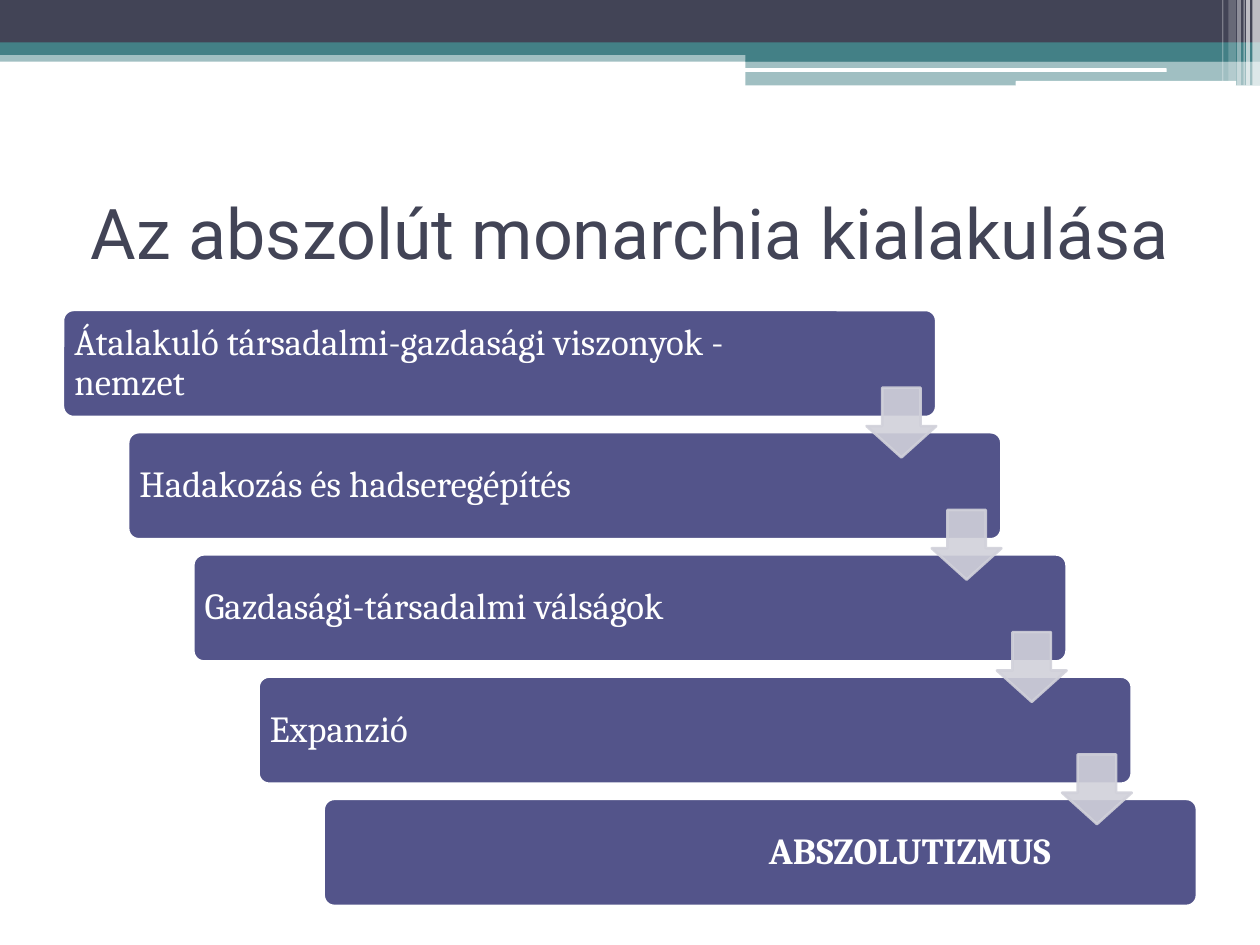
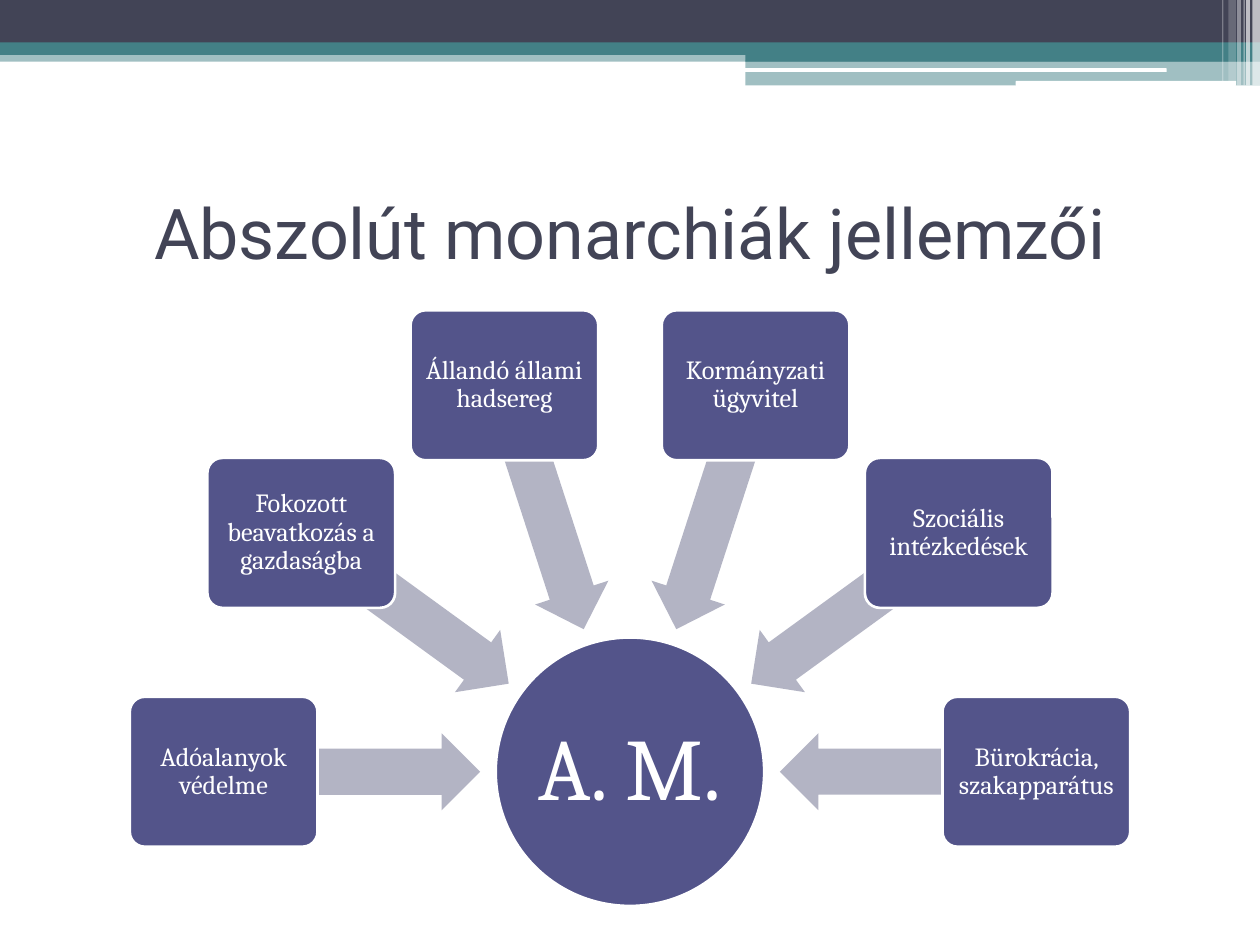
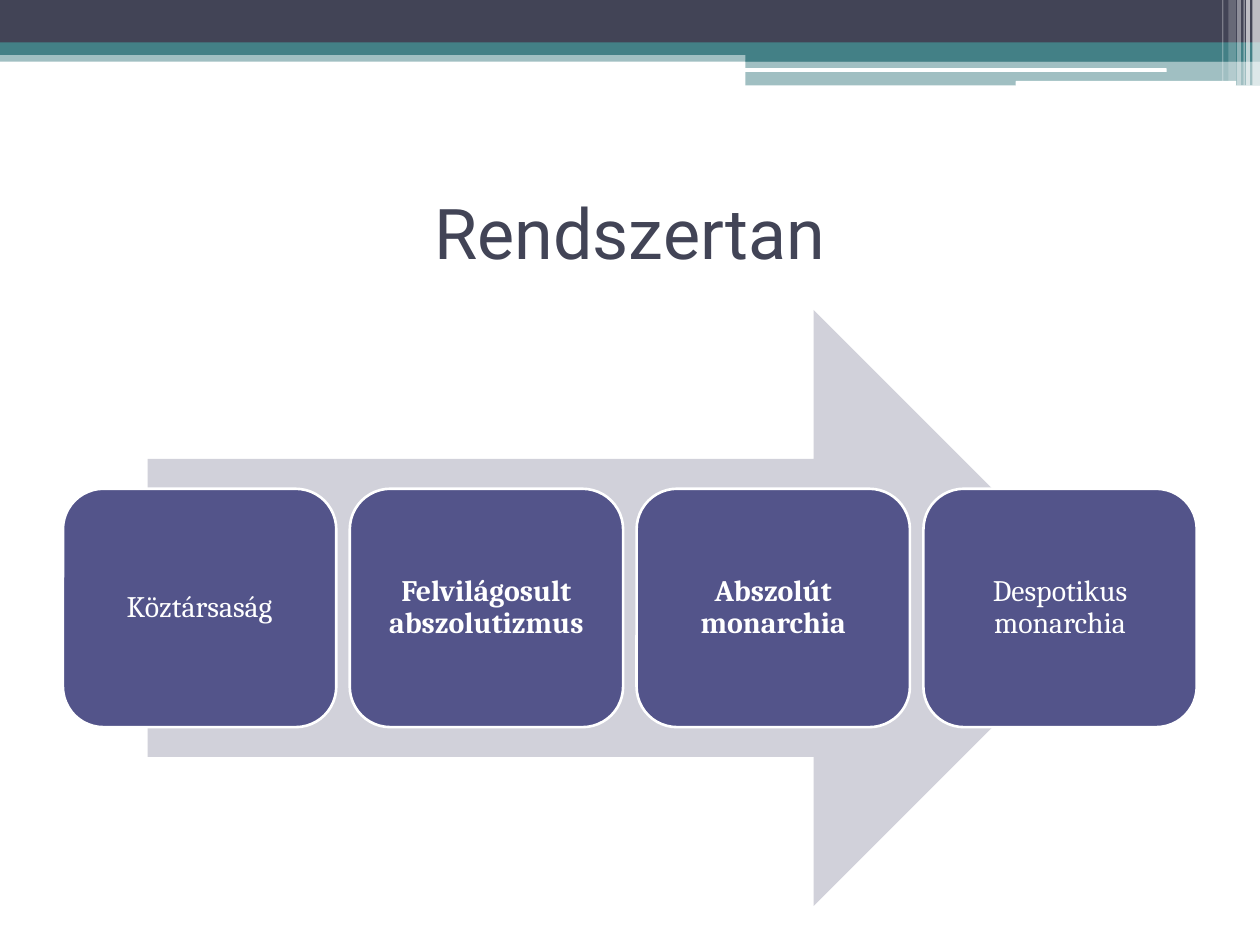
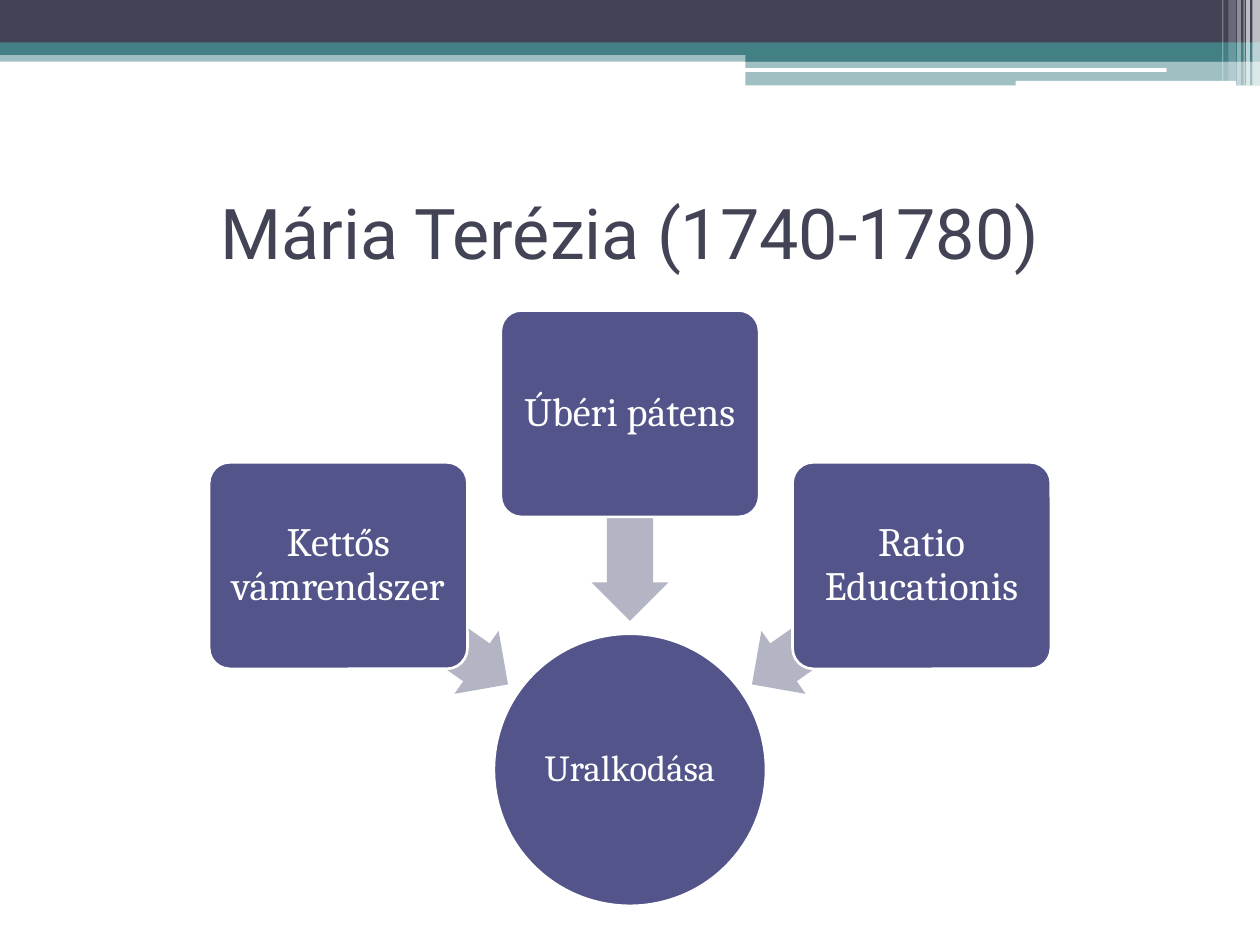
"""Build a four-slide deck on absolute monarchy."""
from dataclasses import dataclass
from math import cos, radians, sin

from lxml import etree
from pptx import Presentation
from pptx.dml.color import RGBColor
from pptx.enum.shapes import MSO_SHAPE
from pptx.enum.text import MSO_ANCHOR, PP_ALIGN
from pptx.oxml.ns import qn
from pptx.util import Pt

RECTANGLE = MSO_SHAPE.RECTANGLE
ROUNDED = MSO_SHAPE.ROUNDED_RECTANGLE
OVAL = MSO_SHAPE.OVAL
DOWN_ARROW = MSO_SHAPE.DOWN_ARROW
LEFT_ARROW = MSO_SHAPE.LEFT_ARROW
RIGHT_ARROW = MSO_SHAPE.RIGHT_ARROW
MIDDLE = MSO_ANCHOR.MIDDLE
LEFT, CENTER, RIGHT = PP_ALIGN.LEFT, PP_ALIGN.CENTER, PP_ALIGN.RIGHT
TITLE_ONLY = 5


@dataclass(frozen=True)
class Theme:
    """Colours, fonts and type sizes of the deck."""
    dark: str = "424456"
    teal: str = "438086"
    white: str = "FFFFFF"
    box: str = "53548A"
    spoke: str = "B3B4C4"
    pale: str = "D1D1DA"
    title_font: str = "Roboto"
    body_font: str = "Cambria"
    title_size: float = 40
    step_size: float = 21
    stage_size: float = 17
    border: float = 1.5


@dataclass(frozen=True)
class Wheel:
    """Measures of a hub with boxes placed around it."""
    hub_y: float
    hub_diameter: float
    hub_size: float
    box_width: float
    box_height: float
    box_radius: float
    box_size: float
    arrow_length: float
    arrow_radius: float
    first_angle: float
    angle_step: float


THEME = Theme()
SLIDE_WIDTH, SLIDE_HEIGHT = 720, 540
CONTENT_LEFT, CONTENT_TOP = 36, 177.12
ARROW_THICKNESS = 44

BANDS = [
    (RECTANGLE, 0, 28.8, 720, 6.48, THEME.teal, 50),
    (RECTANGLE, 0, 0, 720, 24.48, THEME.dark, 100),
    (RECTANGLE, 0, 24.2, 720, 7.2, THEME.teal, 100),
    (RECTANGLE, 426, 28.08, 294, 7.2, THEME.teal, 100),
    (RECTANGLE, 426, 34.56, 294, 14.2, THEME.teal, 50),
    (ROUNDED, 425.5, 39, 241.2, 2.16, THEME.white, 100),
    (ROUNDED, 580.4, 46.2, 126, 2.88, THEME.white, 100),
]
STRIPES = [
    (715.7, 4.3, 48.8, 65), (712.1, 2.16, 48.8, 65), (710.6, 0.72, 48.8, 60),
    (707, 2.16, 48.8, 40), (702, 4.3, 46.2, 20), (698.4, 0.72, 46.2, 30),
]

SIX_BOXES = Wheel(441, 153.4, 50, 107.3, 85.7, 232.2, 15, 146.9, 159.1, 180, 36)
THREE_BOXES = Wheel(439.9, 155.5, 21, 147.6, 118, 203.5, 23, 118.8, 144.5, 215, 55)


def set_opacity(shape, percent):
    """Make the fill and line colours of a shape partly transparent."""
    for color in shape.element.spPr.iter(qn("a:srgbClr")):
        etree.SubElement(color, qn("a:alpha")).set("val", str(percent * 1000))


def add_figure(slide, kind, left, top, width, height, fill,
               line=None, adjustments=(), opacity=100):
    """Add a flat preset shape."""
    shape = slide.shapes.add_shape(kind, Pt(left), Pt(top), Pt(width), Pt(height))
    shape.shadow.inherit = False
    shape.fill.solid()
    shape.fill.fore_color.rgb = RGBColor.from_string(fill)
    if line:
        shape.line.color.rgb = RGBColor.from_string(line)
        shape.line.width = Pt(THEME.border)
    else:
        shape.line.fill.background()
    for index, value in enumerate(adjustments):
        shape.adjustments[index] = value
    if opacity < 100:
        set_opacity(shape, opacity)
    return shape


def style_text(text_frame, font, size, color, alignment, bold=False):
    """Align a text frame and format its runs."""
    text_frame.vertical_anchor = MIDDLE
    for paragraph in text_frame.paragraphs:
        paragraph.alignment = alignment
        for run in paragraph.runs:
            run.font.name = font
            run.font.size = Pt(size)
            run.font.bold = bold
            run.font.color.rgb = RGBColor.from_string(color)


def add_label(shape, text, size, alignment=CENTER, bold=False,
              left_inset=0, right_inset=0, wrap=True):
    """Write white text into a shape."""
    text_frame = shape.text_frame
    text_frame.text = text
    text_frame.word_wrap = wrap
    text_frame.margin_left, text_frame.margin_right = Pt(left_inset), Pt(right_inset)
    text_frame.margin_top = text_frame.margin_bottom = 0
    text_frame.paragraphs[0].line_spacing = 0.9
    style_text(text_frame, THEME.body_font, size, THEME.white, alignment, bold)


def add_box(slide, left, top, width, height, corner=0.1):
    """Add a white-edged rounded box."""
    return add_figure(slide, ROUNDED, left, top, width, height, THEME.box,
                      THEME.white, [corner])


def add_titled_slide(presentation, title):
    """Add a slide and set its title."""
    slide = presentation.slides.add_slide(presentation.slide_layouts[TITLE_ONLY])
    shape = slide.shapes.title
    shape.left, shape.top, shape.width, shape.height = Pt(36), Pt(90), Pt(648), Pt(84.24)
    shape.text_frame.text = title
    style_text(shape.text_frame, THEME.title_font, THEME.title_size, THEME.dark, CENTER)
    return slide


def move_bands_to_layout(slide):
    """Draw the header bands once and hand them to the slide's layout."""
    layout = slide.slide_layout
    for placeholder in list(layout.placeholders)[1:]:
        layout.shapes.element.remove(placeholder.element)
    bands = [add_figure(slide, *band, opacity=opacity) for *band, opacity in BANDS]
    bands += [add_figure(slide, RECTANGLE, left, 0, width, height, THEME.white,
                         opacity=opacity)
              for left, width, height, opacity in STRIPES]
    for band in bands:
        layout.shapes.element.append(band.element)


def add_staircase(slide, steps, conclusion):
    """Add descending steps that are linked by arrows."""
    shift, drop = 37.25, 69.84
    for index, text in enumerate([*steps, conclusion]):
        final = text == conclusion
        box = add_box(slide, CONTENT_LEFT + shift * index, CONTENT_TOP + drop * index,
                      499, 61.2)
        add_label(box, text, THEME.step_size, RIGHT if final else LEFT, final,
                  left_inset=4.7, right_inset=81.7)
    for index in range(len(steps)):
        add_figure(slide, DOWN_ARROW, 495.2 + shift * index, 221.6 + drop * index,
                   39.8, 39.8, THEME.pale, THEME.pale, [0.55, 0.45], opacity=90)


def add_wheel(slide, wheel, hub_text, texts):
    """Add a hub with boxes on an arc, each pointing at the hub."""
    def corner(radius, angle, width, height):
        """Return the left and top of an item centred on the arc."""
        return (SLIDE_WIDTH / 2 + radius * cos(radians(angle)) - width / 2,
                wheel.hub_y + radius * sin(radians(angle)) - height / 2)

    diameter = wheel.hub_diameter
    hub = add_figure(slide, OVAL, *corner(0, 0, diameter, diameter), diameter, diameter,
                     THEME.box, THEME.white)
    add_label(hub, hub_text, wheel.hub_size, wrap=False)
    arrow_extent = (wheel.arrow_length, ARROW_THICKNESS)
    box_extent = (wheel.box_width, wheel.box_height)
    for index, text in enumerate(texts):
        angle = wheel.first_angle + wheel.angle_step * index
        arrow = add_figure(slide, LEFT_ARROW,
                           *corner(wheel.arrow_radius, angle, *arrow_extent),
                           *arrow_extent, THEME.spoke, adjustments=[0.6, 0.5])
        arrow.rotation = angle % 360
        box = add_box(slide, *corner(wheel.box_radius, angle, *box_extent), *box_extent)
        add_label(box, text, wheel.box_size)


def add_stages(slide, stages):
    """Add a row of stages on a wide arrow."""
    add_figure(slide, RIGHT_ARROW, 84.4, CONTENT_TOP, 550.8, 340.6, THEME.pale)
    for index, (text, bold) in enumerate(stages):
        box = add_box(slide, CONTENT_LEFT + 163.9 * index, 279.3, 156.2, 136.2, 0.17)
        add_label(box, text, THEME.stage_size, bold=bold)


def main():
    """Build and save the deck."""
    presentation = Presentation()
    presentation.slide_width, presentation.slide_height = Pt(SLIDE_WIDTH), Pt(SLIDE_HEIGHT)

    slide = add_titled_slide(presentation, "Az abszolút monarchia kialakulása")
    move_bands_to_layout(slide)
    add_staircase(slide, [
        "Átalakuló társadalmi-gazdasági viszonyok - nemzet",
        "Hadakozás és hadseregépítés",
        "Gazdasági-társadalmi válságok",
        "Expanzió",
    ], "ABSZOLUTIZMUS")

    slide = add_titled_slide(presentation, "Abszolút monarchiák jellemzői")
    add_wheel(slide, SIX_BOXES, "A. M.", [
        "Adóalanyok védelme",
        "Fokozott beavatkozás a gazdaságba",
        "Állandó állami hadsereg",
        "Kormányzati ügyvitel",
        "Szociális intézkedések",
        "Bürokrácia, szakapparátus",
    ])

    slide = add_titled_slide(presentation, "Rendszertan")
    add_stages(slide, [
        ("Köztársaság", False),
        ("Felvilágosult abszolutizmus", True),
        ("Abszolút monarchia", True),
        ("Despotikus monarchia", False),
    ])

    slide = add_titled_slide(presentation, "Mária Terézia (1740-1780)")
    add_wheel(slide, THREE_BOXES, "Uralkodása",
              ["Kettős vámrendszer", "Úbéri pátens", "Ratio Educationis"])

    presentation.save("out.pptx")


if __name__ == "__main__":
    main()
